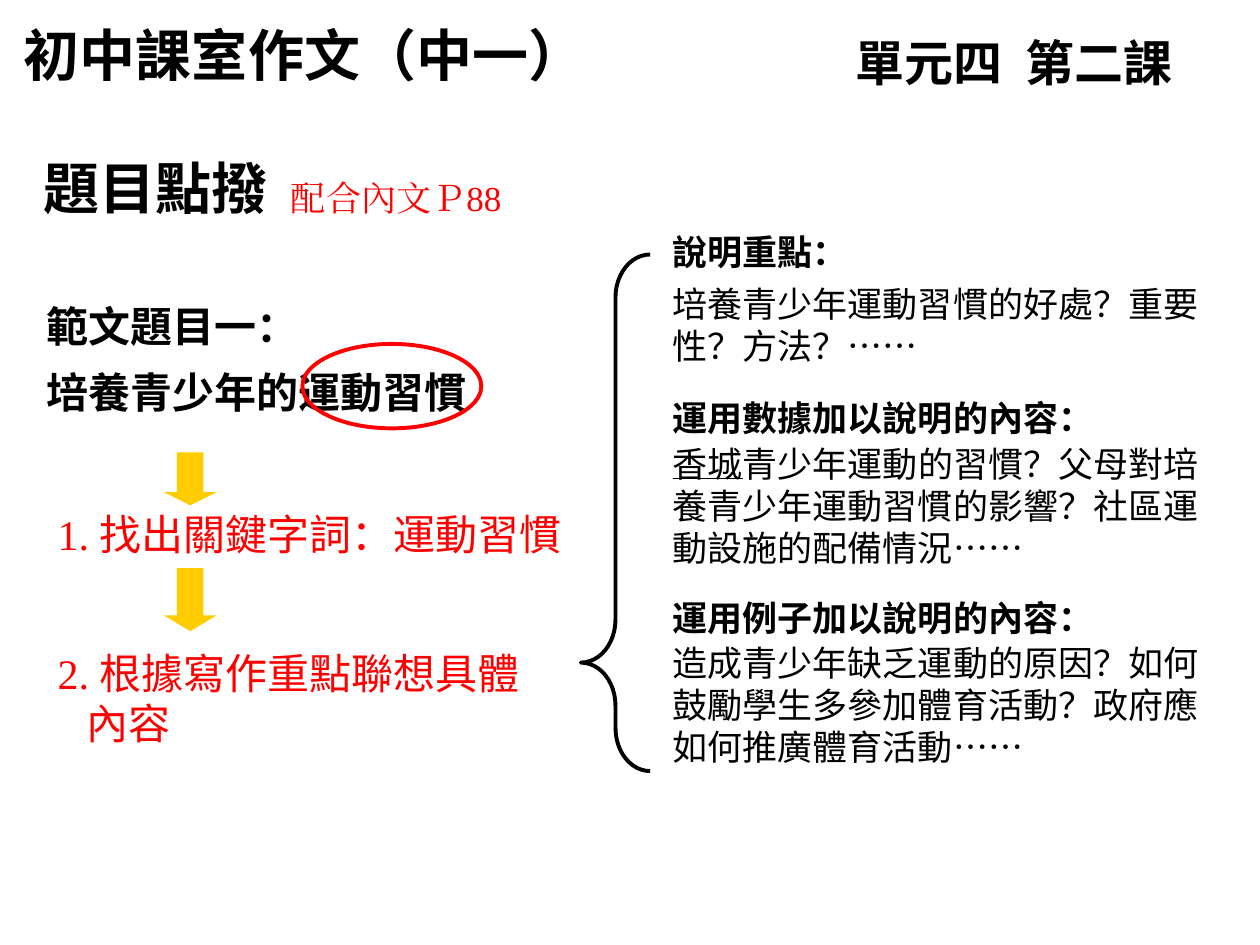
from lxml.etree import SubElement
from pptx import Presentation
from pptx.dml.color import RGBColor
from pptx.enum.shapes import MSO_SHAPE as Kind
from pptx.enum.text import MSO_ANCHOR as Anchor, PP_ALIGN as Align
from pptx.oxml.ns import qn
from pptx.util import Inches, Pt

BLACK, RED, GOLD = "000000", "FF0000", "FFCC00"
SANS, SERIF, HAN = "DejaVu Sans", "Times New Roman", "Noto Sans CJK SC"


def color(code):
    return RGBColor.from_string(code)


def face(font, name):
    """Set one typeface for Latin and East Asian text."""
    font.name = name
    latin = font._element.find(qn("a:latin"))
    east = latin.makeelement(qn("a:ea"), {"typeface": name})
    latin.addnext(east)


class Board:
    def __init__(self, deck):
        self.slide = deck.slides.add_slide(deck.slide_layouts[5])

    def title(self, box, text, **look):
        shape = self.slide.shapes.title
        shape.left, shape.top, shape.width, shape.height = map(Inches, box)
        self.frame(shape)
        self.para(shape.text_frame, 0, [text], **look)

    def text(self, box, *paras, **look):
        """Each para is a dict holding its runs and any change of look."""
        shape = self.slide.shapes.add_textbox(*map(Inches, box))
        self.frame(shape)
        for spot, para in enumerate(paras):
            self.para(shape.text_frame, spot, **{**look, **para})

    def frame(self, shape):
        frame = shape.text_frame
        frame.word_wrap = True
        frame.vertical_anchor = Anchor.TOP

    def para(self, frame, spot, runs, size=24, name=SANS, ink=BLACK,
             bold=False, lead=1, gap=0, align=Align.LEFT, dent=0, tab=0):
        para = frame.paragraphs[0] if spot == 0 else frame.add_paragraph()
        para.alignment, para.line_spacing = align, lead
        para.space_before = Pt(gap)
        props = para._p.get_or_add_pPr()
        if dent:
            props.set("marL", str(Inches(dent)))
            props.set("indent", "0")
        if tab:
            stops = SubElement(props, qn("a:tabLst"))
            SubElement(stops, qn("a:tab"), pos=str(Inches(tab)), algn="l")
        font = para.font
        font.size, font.bold = Pt(size), bold
        font.color.rgb = color(ink)
        face(font, name)
        for item in runs:
            words, own, line = item if isinstance(item, tuple) else (item, name, False)
            run = para.add_run()
            run.text = words
            face(run.font, own)
            if line:
                run.font.underline = True

    def shape(self, kind, box, fill=None, line=None, adj=()):
        shape = self.slide.shapes.add_shape(kind, *map(Inches, box))
        shape.shadow.inherit = False
        if fill:
            shape.fill.solid()
            shape.fill.fore_color.rgb = color(fill)
        else:
            shape.fill.background()
        if line:
            shape.line.color.rgb = color(line)
            shape.line.width = Pt(2.25)
        else:
            shape.line.fill.background()
        for spot, value in enumerate(adj):
            shape.adjustments[spot] = value


def main():
    deck = Presentation()
    deck.slide_width, deck.slide_height = Inches(10), Inches(7.5)
    board = Board(deck)

    # Headings
    board.title((0.09, 0.11, 5.22, 0.63), "初中課室作文（中一）",
                size=32, name="Lato", bold=True)
    board.text((6.69, 0.21, 3.35, 0.57), dict(runs=["單元四\t第二課"]),
               size=28, name="Lato", bold=True, tab=1.35)
    board.text((0.25, 1.17, 3.08, 0.63), dict(runs=["題目點撥"]),
               size=32, name="Arial", bold=True)

    # Essay topic with its key words ringed
    board.text((0.27, 2.22, 5, 1.14), dict(runs=["範文題目一："]),
               dict(runs=["培養青少年的運動習慣"]), bold=True, lead=1.3)
    board.shape(Kind.OVAL, (2.4, 2.73, 1.42, 0.67), line=RED)

    # Steps, each led by an arrow
    for top, tall, head in ((3.59, 0.42, 0.25), (4.51, 0.5, 0.3)):
        board.shape(Kind.DOWN_ARROW, (1.3, top, 0.42, tall), fill=GOLD, adj=(0.5, head))
    board.text((0.36, 3.99, 4.33, 0.5),
               dict(runs=[("1. ", SERIF, False), "找出關鍵字詞：運動習慣"]), ink=RED)
    board.text((0.36, 5.09, 4.17, 0.9),
               dict(runs=[("2. ", SERIF, False), "根據寫作重點聯想具體"]),
               dict(runs=["內容"], dent=0.23), ink=RED)

    # Points to cover
    board.shape(Kind.LEFT_BRACE, (4.61, 2.02, 0.55, 4.1), line=BLACK, adj=(0.62, 0.79))
    dots = ("……", HAN, False)
    board.text(
        (5.24, 1.78, 4.57, 4.44),
        dict(runs=["說明重點："], bold=True),
        dict(runs=["培養青少年運動習慣的好處？重要性？方法？", dots], gap=6),
        dict(runs=["運用數據加以說明的內容："], bold=True, gap=17),
        dict(runs=[("香城", SANS, True),
                   "青少年運動的習慣？父母對培養青少年運動習慣的影響？社區運動設施的配備情況",
                   dots], gap=2),
        dict(runs=["運用例子加以說明的內容："], bold=True, gap=16),
        dict(runs=["造成青少年缺乏運動的原因？如何鼓勵學生多參加體育活動？政府應如何推廣體育活動",
                   dots], gap=2),
        size=20)

    # Page reference
    board.text((1.91, 1.35, 2.47, 0.43), dict(runs=["配合內文Ｐ88"]),
               size=20, name=SERIF, ink=RED, align=Align.CENTER)

    deck.save("out.pptx")


if __name__ == "__main__":
    main()
